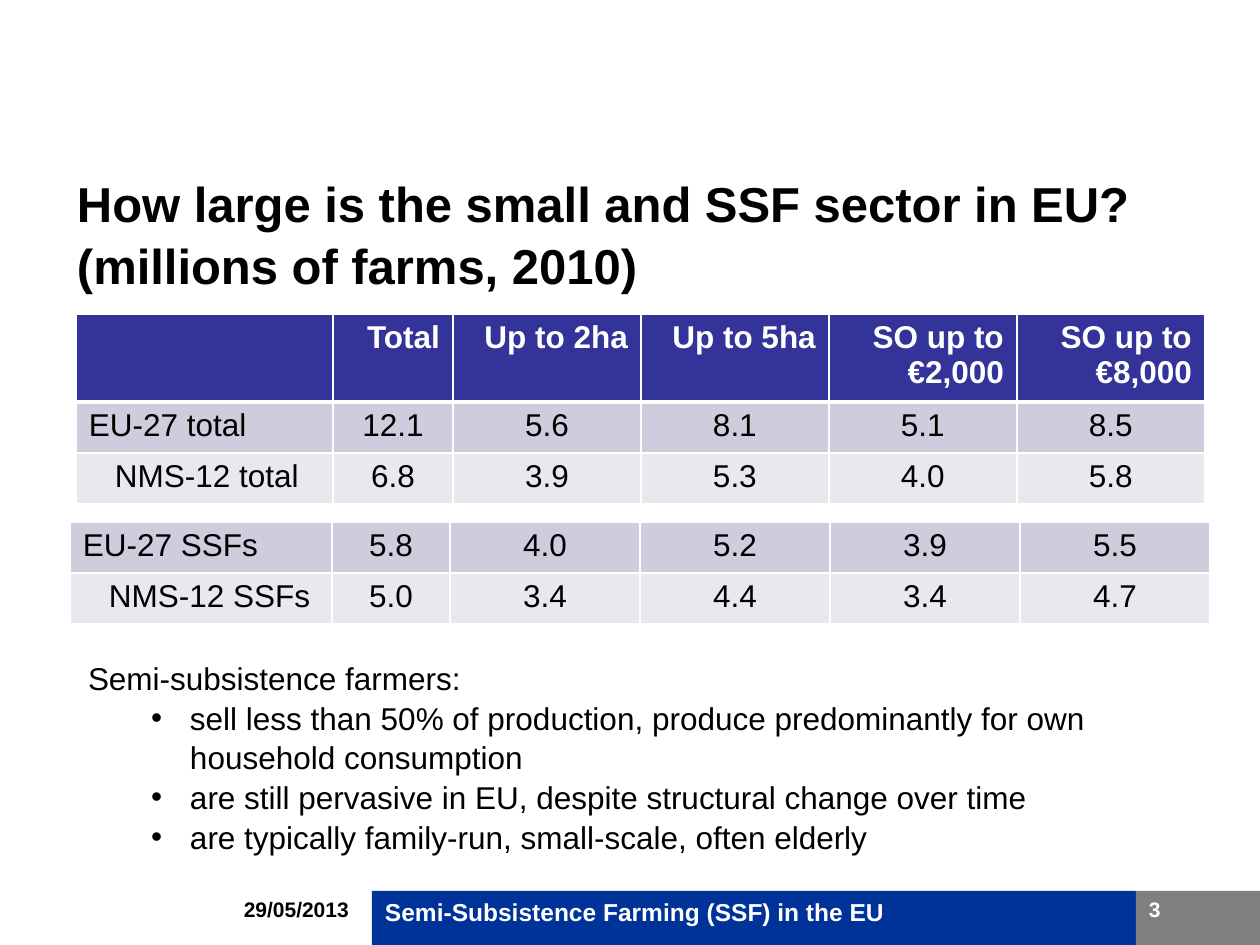
from dataclasses import dataclass

from lxml.etree import SubElement, fromstring
from pptx import Presentation
from pptx.dml.color import RGBColor
from pptx.enum.shapes import MSO_SHAPE
from pptx.enum.text import MSO_ANCHOR, MSO_AUTO_SIZE, PP_ALIGN
from pptx.oxml.ns import nsdecls, qn
from pptx.util import Emu, Inches, Pt


@dataclass(frozen=True)
class Theme:
    font: str = "Arial"
    ink: str = "000000"
    paper: str = "FFFFFF"
    header: str = "333399"
    band_dark: str = "CDCDDE"
    band_light: str = "E8E8EF"
    footer: str = "003399"
    number: str = "808080"
    title_size: int = 28
    body_size: int = 18
    footer_size: int = 14
    small_size: int = 12


def px(length):
    return Emu(round(length * 914400 / 126))


def assign(target, values):
    for name, value in values.items():
        setattr(target, name, value)


class SlideBuilder:
    def __init__(self, slide, theme):
        self.slide = slide
        self.theme = theme

    def place(self, shape, box):
        assign(shape, dict(zip(("left", "top", "width", "height"), map(px, box))))

    def add_text(self, paragraph, text, size, color, bold=False,
                 align=PP_ALIGN.LEFT, spacing=1.0):
        assign(paragraph, {"alignment": align, "line_spacing": spacing,
                           "space_before": Pt(0), "space_after": Pt(0)})
        run = paragraph.add_run()
        run.text = text
        assign(run.font, {"name": self.theme.font, "size": Pt(size), "bold": bold})
        run.font.color.rgb = RGBColor.from_string(color)

    def frame(self, shape):
        assign(shape.text_frame, {
            "word_wrap": True, "auto_size": MSO_AUTO_SIZE.NONE,
            "vertical_anchor": MSO_ANCHOR.TOP,
            "margin_left": px(13), "margin_right": px(13),
            "margin_top": px(6), "margin_bottom": px(6)})
        return shape.text_frame

    def title(self, text, box):
        heading = self.slide.shapes.title
        self.place(heading, box)
        self.add_text(self.frame(heading).paragraphs[0], text,
                      self.theme.title_size, self.theme.ink, bold=True, spacing=1.05)

    def bullet_list(self, lead, points, box):
        body = self.slide.placeholders[1]
        self.place(body, box)
        frame = self.frame(body)
        for index, text in enumerate([lead, *points]):
            paragraph = frame.add_paragraph() if index else frame.paragraphs[0]
            properties = paragraph._p.get_or_add_pPr()
            if index:
                paragraph.level = 1
                properties.set("marL", str(px(102)))
                properties.set("indent", str(-px(39)))
                SubElement(properties, qn("a:buChar"), char="•")
            else:
                properties.set("marL", "0")
                properties.set("indent", "0")
                SubElement(properties, qn("a:buNone"))
            self.add_text(paragraph, text, self.theme.body_size, self.theme.ink,
                          spacing=1.05)

    def label(self, text, box, size, color, align=PP_ALIGN.LEFT):
        label = self.slide.shapes.add_textbox(*map(px, box))
        self.add_text(self.frame(label).paragraphs[0], text, size, color, True, align)

    def bar(self, text, box, size, fill):
        bar = self.slide.shapes.add_shape(MSO_SHAPE.RECTANGLE, *map(px, box))
        bar.shadow.inherit = False
        bar.fill.solid()
        bar.fill.fore_color.rgb = RGBColor.from_string(fill)
        bar.line.fill.background()
        self.add_text(self.frame(bar).paragraphs[0], text, size, self.theme.paper, True)

    def borders(self, cell, top, bottom):
        properties = cell._tc.get_or_add_tcPr()
        widths = {"lnL": 1, "lnR": 1, "lnT": top, "lnB": bottom}
        for index, (side, width) in enumerate(widths.items()):
            properties.insert(index, fromstring(
                f'<a:{side} {nsdecls("a")} w="{Pt(width)}"><a:solidFill>'
                f'<a:srgbClr val="{self.theme.paper}"/></a:solidFill></a:{side}>'))

    def cell(self, cell, text, fill, color, bold, align, indent=0):
        cell.fill.solid()
        cell.fill.fore_color.rgb = RGBColor.from_string(fill)
        assign(cell, {"margin_left": px(13 + indent), "margin_right": px(13),
                      "margin_top": px(6), "margin_bottom": px(6)})
        if text:
            self.add_text(cell.text_frame.paragraphs[0], text, self.theme.body_size,
                          color, bold, align)

    def table(self, origin, widths, heights, rows, has_header=False):
        theme = self.theme
        box = (*origin, sum(widths), sum(heights))
        table = self.slide.shapes.add_table(
            len(rows), len(widths), *map(px, box)).table
        assign(table, {"first_row": has_header, "horz_banding": False})
        for column, width in zip(table.columns, widths):
            column.width = px(width)
        for row, height in zip(table.rows, heights):
            row.height = px(height)
        for r, values in enumerate(rows):
            header = has_header and r == 0
            nested = values[0].startswith("NMS")
            fill = (theme.header if header
                    else theme.band_light if nested else theme.band_dark)
            color = theme.paper if header else theme.ink
            for c, text in enumerate(values):
                align = (PP_ALIGN.RIGHT if header
                         else PP_ALIGN.CENTER if c else PP_ALIGN.LEFT)
                cell = table.cell(r, c)
                self.cell(cell, text, fill, color, header, align,
                          indent=26 if nested and c == 0 else 0)
                self.borders(cell, top=3 if has_header and r == 1 else 1,
                             bottom=3 if header else 1)


def main():
    presentation = Presentation()
    assign(presentation, {"slide_width": Inches(10), "slide_height": Inches(7.5)})
    theme = Theme()
    builder = SlideBuilder(
        presentation.slides.add_slide(presentation.slide_layouts[1]), theme)

    builder.title("How large is the small and SSF sector in EU? "
                  "(millions of farms, 2010)", (64, 165, 1134, 129))
    builder.table((76, 314), [257, 120] + [188] * 4, [88, 51, 51], [
        ["", "Total", "Up to 2ha", "Up to 5ha", "SO up to €2,000", "SO up to €8,000"],
        ["EU-27 total", "12.1", "5.6", "8.1", "5.1", "8.5"],
        ["NMS-12 total", "6.8", "3.9", "5.3", "4.0", "5.8"],
    ], has_header=True)
    builder.table((70, 522), [262, 118] + [190] * 4, [51, 51], [
        ["EU-27 SSFs", "5.8", "4.0", "5.2", "3.9", "5.5"],
        ["NMS-12 SSFs", "5.0", "3.4", "4.4", "3.4", "4.7"],
    ])
    builder.bullet_list("Semi-subsistence farmers:", [
        "sell less than 50% of production, produce predominantly for own "
        "household consumption",
        "are still pervasive in EU, despite structural change over time",
        "are typically family-run, small-scale, often elderly",
    ], (75, 651, 1150, 204))

    builder.label("29/05/2013", (223, 891, 139, 54), theme.small_size, theme.ink,
                  PP_ALIGN.RIGHT)
    builder.bar("Semi-Subsistence Farming (SSF) in the EU", (372, 891, 764, 54),
                theme.footer_size, theme.footer)
    builder.bar("3", (1136, 891, 124, 54), theme.small_size, theme.number)
    presentation.save("out.pptx")


if __name__ == "__main__":
    main()
